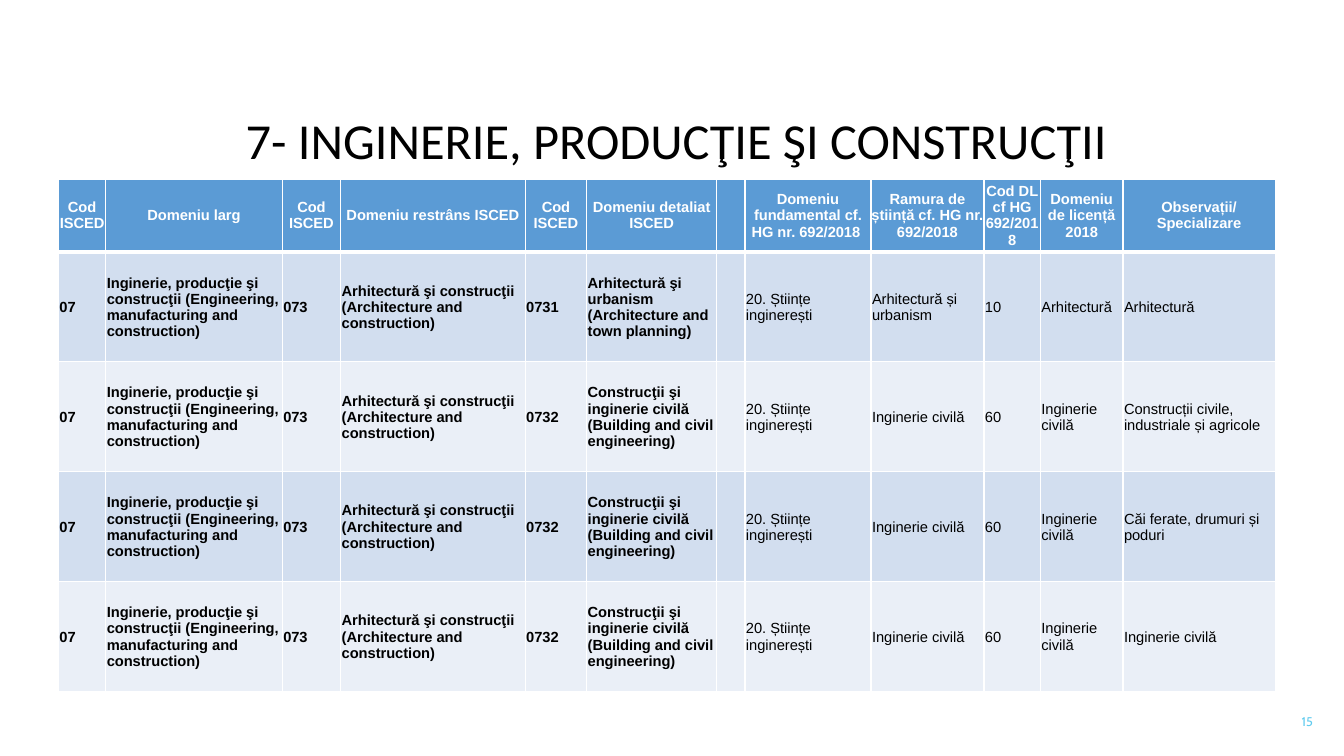
from lxml.etree import SubElement
from pptx import Presentation
from pptx.dml.color import RGBColor
from pptx.enum.text import MSO_ANCHOR, PP_ALIGN
from pptx.oxml.ns import qn
from pptx.util import Inches, Pt

COLORS = {
    "black": "000000",
    "white": "FFFFFF",
    "header": "5B9BD5",
    "odd_row": "D2DEEF",
    "even_row": "EAEFF7",
    "page_number": "5FCBEF",
}

COLUMN_WIDTHS = [0.47, 1.75, 0.58, 1.83, 0.61, 1.29, 0.28, 1.25, 1.12, 0.56, 0.82, 1.51]
HEADER_HEIGHT, ROW_HEIGHT = 0.72, 1.09
BOLD_COLUMNS = 7  # the ISCED side of the table

HEADERS = [
    "Cod ISCED", "Domeniu larg", "Cod ISCED", "Domeniu restrâns ISCED",
    "Cod ISCED", "Domeniu detaliat ISCED", "",
    "Domeniu fundamental cf. HG nr. 692/2018 ",
    "Ramura de știință cf. HG nr. 692/2018", "Cod DL cf HG 692/2018",
    "Domeniu de licență 2018", "Observații/ Specializare",
]
BROAD_FIELD = [
    "07", "Inginerie, producţie şi construcţii (Engineering, manufacturing and construction)",
    "073", "Arhitectură şi construcţii (Architecture and construction)",
]
FUNDAMENTAL_FIELD = ["", "20. Științe inginerești"]
ARCHITECTURE = BROAD_FIELD + [
    "0731", "Arhitectură şi urbanism (Architecture and town planning)",
] + FUNDAMENTAL_FIELD + ["Arhitectură și urbanism", "10", "Arhitectură"]
CIVIL_ENGINEERING = BROAD_FIELD + [
    "0732", "Construcţii şi inginerie civilă (Building and civil engineering)",
] + FUNDAMENTAL_FIELD + ["Inginerie civilă", "60", "Inginerie civilă"]
ROWS = [
    ARCHITECTURE + ["Arhitectură"],
    CIVIL_ENGINEERING + ["Construcții civile, industriale și agricole"],
    CIVIL_ENGINEERING + ["Căi ferate, drumuri și poduri"],
    CIVIL_ENGINEERING + ["Inginerie civilă"],
]


class SlideBuilder:
    """Holds the text style and the current slide."""

    table_font = "Arial"
    table_size = 10.5

    def __init__(self, slide):
        self.slide = slide

    def add_text(self, frame, text, font, size, color, align, bold=False):
        paragraph = frame.paragraphs[0]
        paragraph.alignment = align
        paragraph.font.size = Pt(size)
        if text:
            run = paragraph.add_run()
            run.text = text
            run.font.name = font
            run.font.size = Pt(size)
            run.font.bold = bold
            run.font.color.rgb = RGBColor.from_string(COLORS[color])
        return paragraph

    def place(self, shape, left, top, width, height):
        shape.left, shape.top = Inches(left), Inches(top)
        shape.width, shape.height = Inches(width), Inches(height)

    def title(self, text, *position):
        shape = self.slide.shapes.title
        self.place(shape, *position)
        shape.text_frame.vertical_anchor = MSO_ANCHOR.MIDDLE
        paragraph = self.add_text(shape.text_frame, text, "Calibri", 36, "black", PP_ALIGN.CENTER)
        paragraph.line_spacing = 0.9

    def page_number(self, text, *position):
        shape = self.slide.shapes.add_textbox(*(Inches(length) for length in position))
        shape.text_frame.word_wrap = True
        shape.text_frame.vertical_anchor = MSO_ANCHOR.MIDDLE
        self.add_text(shape.text_frame, text, "Cabin", 9, "page_number", PP_ALIGN.RIGHT)

    def borders(self, cell, top, bottom):
        properties = cell._tc.get_or_add_tcPr()
        for side, points in (("L", 1), ("R", 1), ("T", top), ("B", bottom)):
            line = SubElement(properties, qn(f"a:ln{side}"), w=str(Pt(points)))
            fill = SubElement(line, qn("a:solidFill"))
            SubElement(fill, qn("a:srgbClr"), val=COLORS["white"])

    def cell(self, cell, text, row, column):
        is_header = row == 0
        # Borders come before the fill in the cell properties
        self.borders(cell, top=3 if row == 1 else 1, bottom=3 if is_header else 1)
        fill = "header" if is_header else ("odd_row" if row % 2 else "even_row")
        cell.fill.solid()
        cell.fill.fore_color.rgb = RGBColor.from_string(COLORS[fill])
        cell.vertical_anchor = MSO_ANCHOR.MIDDLE
        margin = Inches(0 if is_header else 0.01)
        cell.margin_left = cell.margin_right = cell.margin_top = margin
        cell.margin_bottom = 0
        self.add_text(
            cell.text_frame, text, self.table_font, self.table_size,
            "white" if is_header else "black",
            PP_ALIGN.CENTER if is_header else PP_ALIGN.LEFT,
            bold=is_header or column < BOLD_COLUMNS,
        )

    def table(self, rows, left, top):
        heights = [HEADER_HEIGHT] + [ROW_HEIGHT] * (len(rows) - 1)
        table = self.slide.shapes.add_table(
            len(rows), len(COLUMN_WIDTHS), Inches(left), Inches(top),
            Inches(sum(COLUMN_WIDTHS)), Inches(sum(heights)),
        ).table
        for column, width in zip(table.columns, COLUMN_WIDTHS):
            column.width = Inches(width)
        for row, height in zip(table.rows, heights):
            row.height = Inches(height)
        for row, texts in enumerate(rows):
            for column, text in enumerate(texts):
                self.cell(table.cell(row, column), text, row, column)


def main():
    presentation = Presentation()
    presentation.slide_width = Inches(13.33)
    presentation.slide_height = Inches(7.5)
    title_only = presentation.slide_layouts[5]
    builder = SlideBuilder(presentation.slides.add_slide(title_only))

    # Title
    builder.title("7- INGINERIE, PRODUCŢIE ŞI CONSTRUCŢII", 0.96, 1.06, 11.5, 0.72)
    # Table of study fields
    builder.table([HEADERS] + ROWS, 0.58, 1.78)
    # Page number
    builder.page_number("15", 10.12, 6.96, 3, 0.4)

    presentation.save("out.pptx")


if __name__ == "__main__":
    main()
